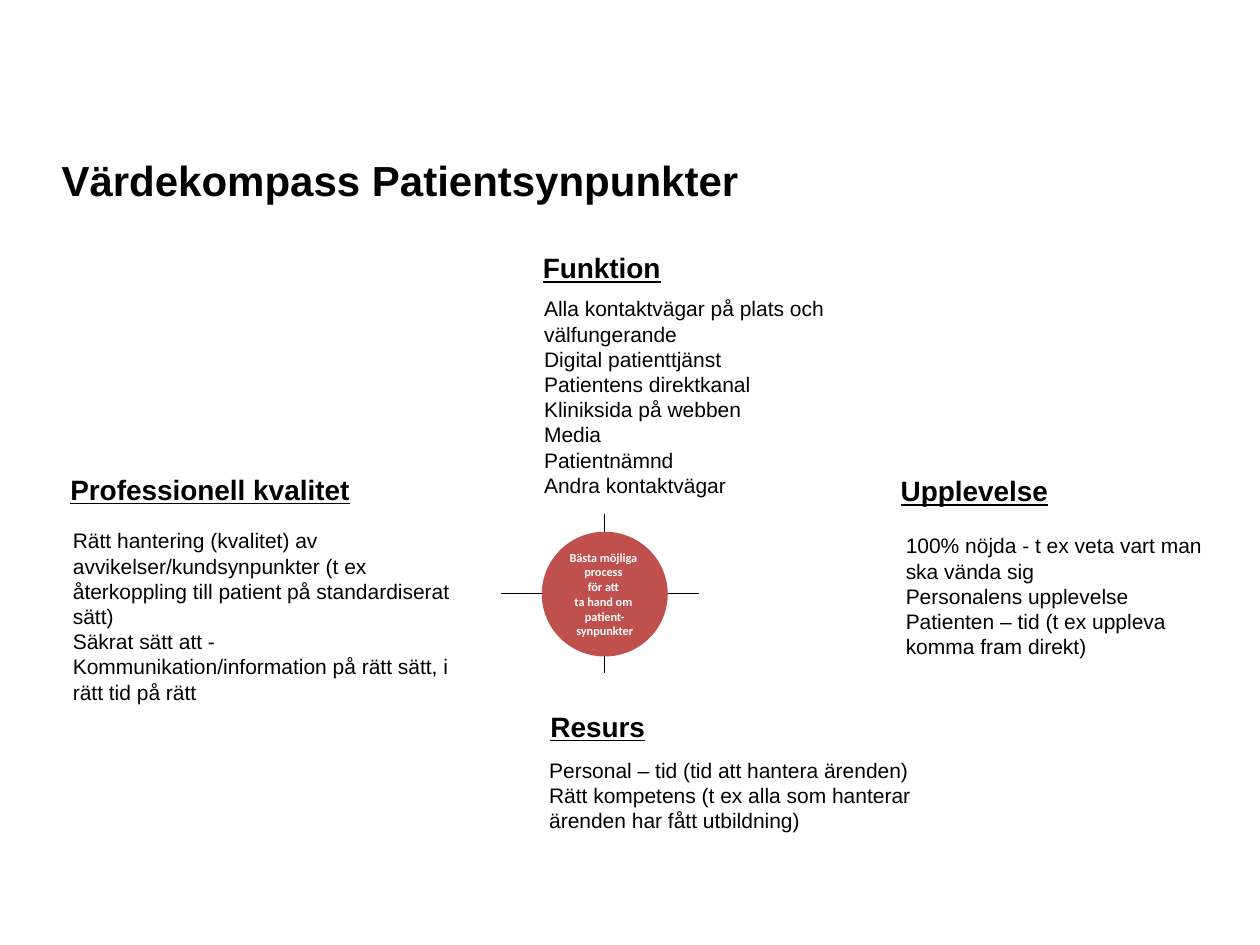
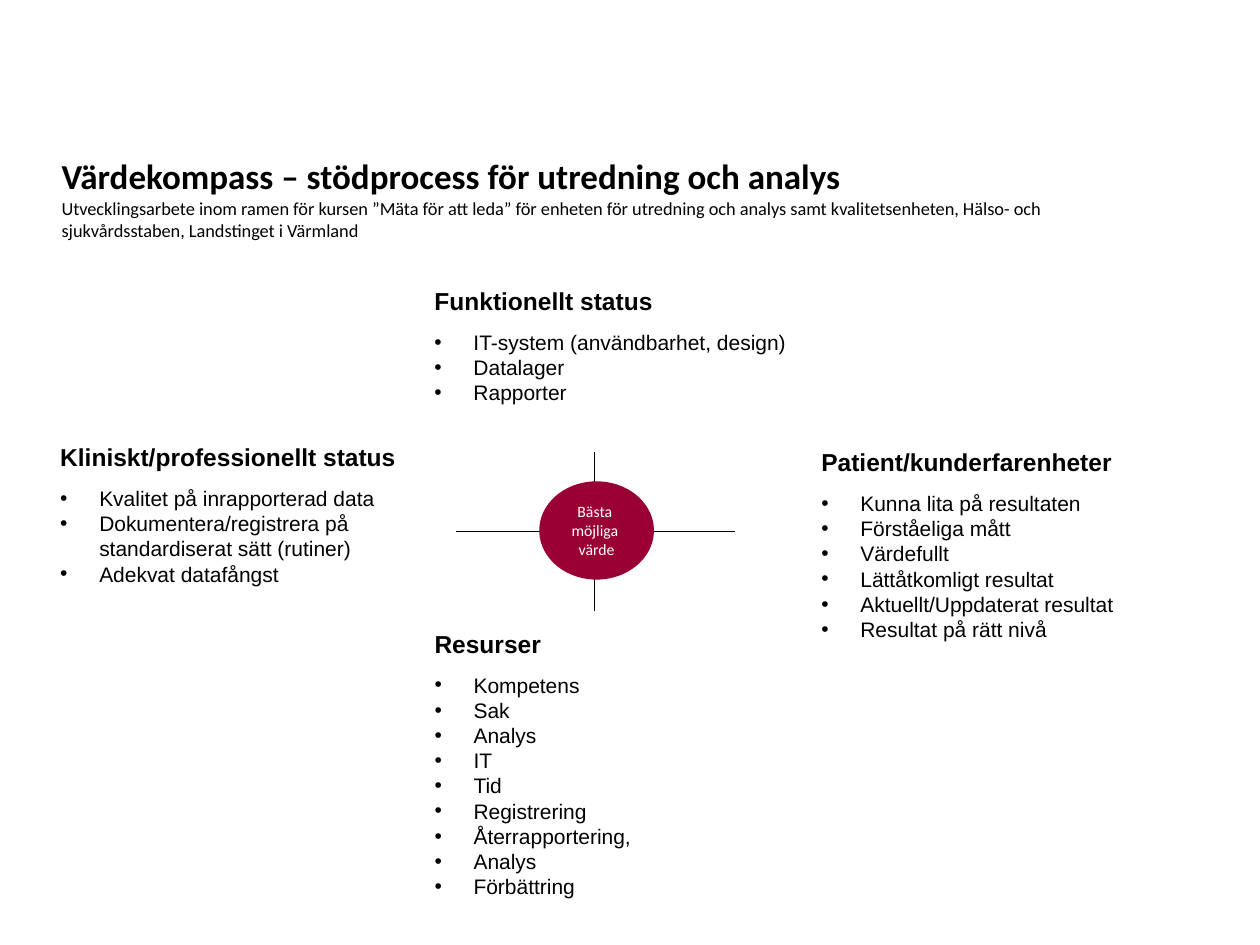
from collections import namedtuple
from dataclasses import dataclass

from lxml.etree import SubElement
from pptx import Presentation
from pptx.dml.color import RGBColor
from pptx.enum.shapes import MSO_CONNECTOR, MSO_SHAPE
from pptx.enum.text import MSO_ANCHOR, MSO_AUTO_SIZE, PP_ALIGN
from pptx.oxml.ns import qn
from pptx.util import Inches, Pt

Box = namedtuple("Box", "left top width height")


@dataclass(frozen=True)
class Theme:
    ink: RGBColor = RGBColor(0x00, 0x00, 0x00)
    paper: RGBColor = RGBColor(0xFF, 0xFF, 0xFF)
    red: RGBColor = RGBColor(0xC0, 0x50, 0x4D)
    wine: RGBColor = RGBColor(0x99, 0x00, 0x33)
    sans: str = "Arial"
    humanist: str = "Calibri"
    title: float = 24
    long_title: float = 20
    subtitle: float = 10.5
    heading: float = 16
    list_heading: float = 14
    body: float = 12
    small_hub: float = 7
    hub: float = 9
    line: float = 0.75
    list_gap: float = 8
    indent: float = 0.31


THEME = Theme()


def inches(box):
    return [Inches(length) for length in box]


def set_bullet(para):
    properties = para._p.get_or_add_pPr()
    properties.set("marL", str(Inches(THEME.indent)))
    properties.set("indent", str(-Inches(THEME.indent)))
    SubElement(properties, qn("a:buFont")).set("typeface", THEME.sans)
    SubElement(properties, qn("a:buChar")).set("char", "•")


def write(frame, text, size=THEME.body, font=THEME.sans, color=THEME.ink,
          bold=False, underline=False, bullet=False, align=None, before=0):
    """Add one paragraph to a text frame, using the empty first one if there is one."""
    para = frame.paragraphs[0]
    if para.runs:
        para = frame.add_paragraph()
        para.space_before = Pt(before)
    if align is not None:
        para.alignment = align
    if bullet:
        set_bullet(para)
    span = para.add_run()
    span.text = text
    span.font.name, span.font.size = font, Pt(size)
    span.font.bold, span.font.underline = bold, underline
    span.font.color.rgb = color


def add_frame(page, box, wrap=True):
    frame = page.shapes.add_textbox(*inches(box)).text_frame
    frame.word_wrap = wrap
    frame.auto_size = MSO_AUTO_SIZE.SHAPE_TO_FIT_TEXT
    return frame


def add_line(page, start, end):
    line = page.shapes.add_connector(MSO_CONNECTOR.STRAIGHT, *inches(start + end))
    line.line.color.rgb = THEME.ink
    line.line.width = Pt(THEME.line)
    SubElement(line._element.spPr, qn("a:effectLst"))


def add_hub(page, box, cross, axis, fill, lines, wrap=True, **style):
    """Draw a cross that fills its box, upright at axis, and the ellipse over it."""
    middle = cross.top + cross.height / 2
    add_line(page, (cross.left, middle), (cross.left + cross.width, middle))
    add_line(page, (axis, cross.top), (axis, cross.top + cross.height))

    hub = page.shapes.add_shape(MSO_SHAPE.OVAL, *inches(box))
    hub.shadow.inherit = False
    hub.fill.solid()
    hub.fill.fore_color.rgb = fill
    hub.line.fill.background()
    frame = hub.text_frame
    frame.word_wrap = wrap
    frame.vertical_anchor = MSO_ANCHOR.MIDDLE
    for text in lines:
        write(frame, text, font=THEME.humanist, color=THEME.paper,
              align=PP_ALIGN.CENTER, **style)


def add_topic(page, heading, heading_box, items, items_box, wrap=True):
    """Underlined heading with a plain text box beneath."""
    write(add_frame(page, heading_box, wrap), heading,
          size=THEME.heading, bold=True, underline=True)
    frame = add_frame(page, items_box)
    for item in items:
        write(frame, item)


def add_bullet_topic(page, heading, box, items):
    """Heading and bullets in one text box."""
    frame = add_frame(page, box)
    write(frame, heading, size=THEME.list_heading, bold=True)
    for index, item in enumerate(items):
        write(frame, item, bullet=True, before=0 if index else THEME.list_gap)


def add_page(deck, title, title_height, **style):
    page = deck.slides.add_slide(deck.slide_layouts[6])
    frame = add_frame(page, Box(0.39, 1.18, 8.98, title_height))
    write(frame, title, bold=True, **style)
    return page, frame


def build_patient_compass(deck):
    page, _ = add_page(deck, "Värdekompass Patientsynpunkter", 0.5, size=THEME.title)

    # Centre
    add_hub(page, Box(4.3, 4.22, 1, 0.99), Box(3.98, 4.08, 1.57, 1.26), 4.8, THEME.red,
            ["Bästa möjliga ", "process ", "för att ", "ta hand om ",
             "patient-", "synpunkter"],
            wrap=False, size=THEME.small_hub, bold=True)

    # Four directions
    add_topic(page, "Professionell kvalitet", Box(0.46, 3.7, 2.43, 0.37), [
        "Rätt hantering (kvalitet) av avvikelser/kundsynpunkter (t ex "
        "återkoppling till patient på standardiserat sätt)",
        "Säkrat sätt att - Kommunikation/information på rätt sätt, i rätt tid på rätt",
    ], Box(0.48, 4.14, 3.29, 1.72), wrap=False)
    add_topic(page, "Funktion", Box(4.21, 1.94, 1.5, 0.37), [
        "Alla kontaktvägar på plats och välfungerande",
        "Digital patienttjänst",
        "Patientens direktkanal",
        "Kliniksida på webben",
        "Media",
        "Patientnämnd",
        "Andra kontaktvägar",
    ], Box(4.22, 2.3, 3.03, 1.72))
    add_topic(page, "Upplevelse", Box(7.05, 3.71, 1.85, 0.37), [
        "100% nöjda - t ex veta vart man ska vända sig",
        "Personalens upplevelse",
        "Patienten – tid (t ex uppleva komma fram direkt)",
    ], Box(7.09, 4.18, 2.72, 1.31))
    add_topic(page, "Resurs", Box(4.27, 5.58, 0.95, 0.37), [
        "Personal – tid (tid att hantera ärenden)",
        "Rätt kompetens (t ex alla som hanterar ärenden har fått utbildning)",
    ], Box(4.26, 5.96, 3.18, 0.71), wrap=False)


def build_support_compass(deck):
    page, frame = add_page(deck, "Värdekompass – stödprocess för utredning och analys",
                           1.13, size=THEME.long_title, font=THEME.humanist)
    write(frame, "Utvecklingsarbete inom ramen för kursen ”Mäta för att leda” för "
          "enheten för utredning och analys samt kvalitetsenheten, Hälso- och "
          "sjukvårdsstaben, Landstinget i Värmland",
          size=THEME.subtitle, font=THEME.humanist)

    # Centre
    add_hub(page, Box(4.28, 3.82, 0.91, 0.78), Box(3.62, 3.59, 2.21, 1.26), 4.72,
            THEME.wine, ["Bästa ", "möjliga ", "värde"], size=THEME.hub)

    # Four directions
    add_bullet_topic(page, "Kliniskt/professionellt status", Box(0.38, 3.46, 3.24, 1.53), [
        "Kvalitet på inrapporterad data",
        "Dokumentera/registrera på standardiserat sätt (rutiner)",
        "Adekvat datafångst",
    ])
    add_bullet_topic(page, "Funktionellt status", Box(3.35, 2.22, 3.7, 1.06), [
        "IT-system (användbarhet, design)",
        "Datalager",
        "Rapporter",
    ])
    add_bullet_topic(page, "Resurser", Box(3.35, 4.94, 2.68, 2.27), [
        "Kompetens", "Sak", "Analys", "IT", "Tid", "Registrering",
        "Återrapportering,", "Analys", "Förbättring",
    ])
    add_bullet_topic(page, "Patient/kunderfarenheter", Box(6.42, 3.5, 3.11, 1.67), [
        "Kunna lita på resultaten",
        "Förståeliga mått",
        "Värdefullt",
        "Lättåtkomligt resultat",
        "Aktuellt/Uppdaterat resultat",
        "Resultat på rätt nivå",
    ])


def main():
    deck = Presentation()
    deck.slide_width, deck.slide_height = Inches(10), Inches(7.5)
    build_patient_compass(deck)
    build_support_compass(deck)
    deck.save("out.pptx")


if __name__ == "__main__":
    main()
